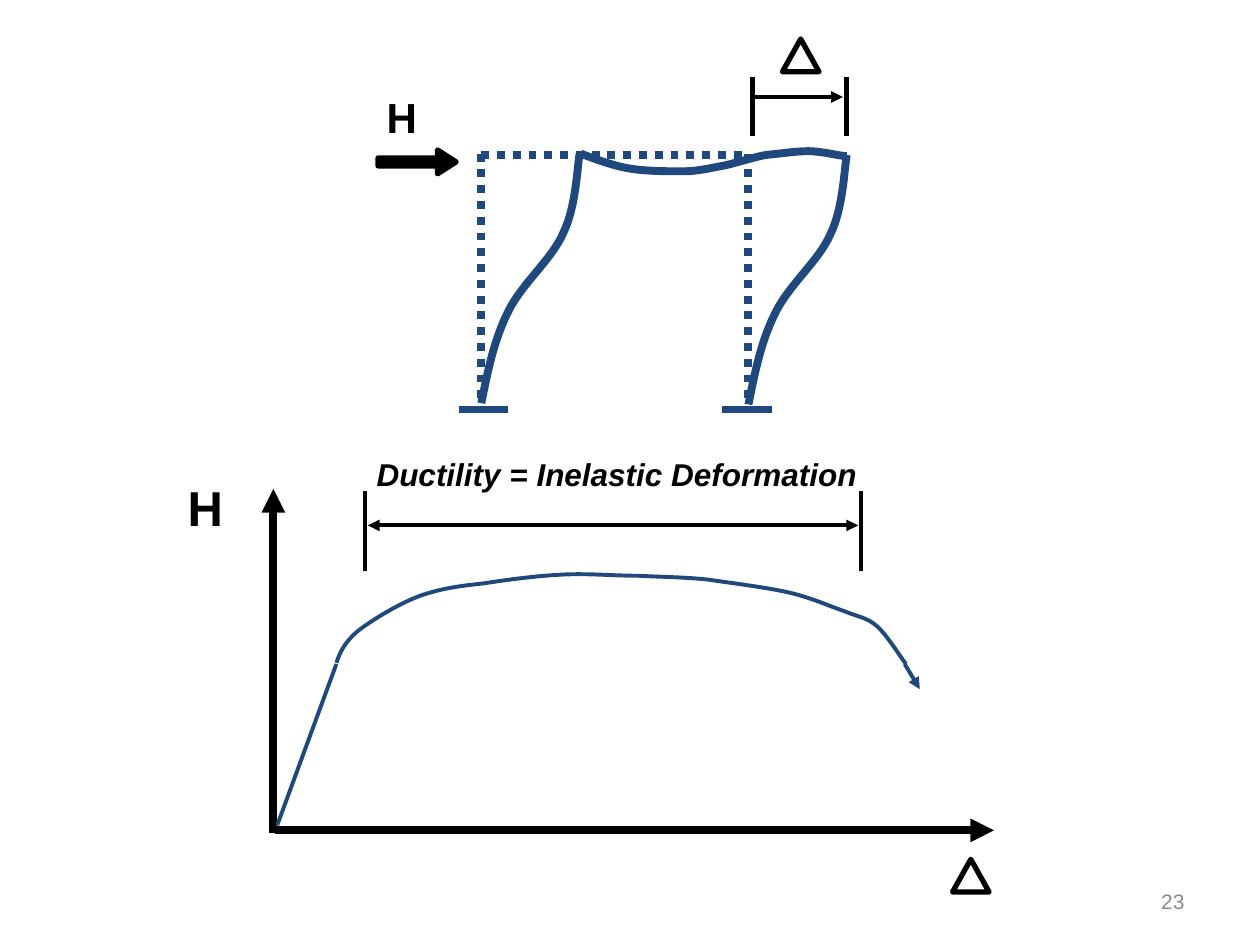
from lxml import etree
from pptx import Presentation
from pptx.dml.color import RGBColor
from pptx.enum.dml import MSO_LINE
from pptx.enum.shapes import MSO_CONNECTOR, MSO_SHAPE
from pptx.enum.text import MSO_ANCHOR, PP_ALIGN
from pptx.oxml.ns import qn
from pptx.util import Inches, Pt

STRAIGHT = MSO_CONNECTOR.STRAIGHT
DOTTED = MSO_LINE.ROUND_DOT
TRIANGLE, RIGHT_ARROW = MSO_SHAPE.ISOSCELES_TRIANGLE, MSO_SHAPE.RIGHT_ARROW
LEFT, RIGHT = PP_ALIGN.LEFT, PP_ALIGN.RIGHT
TOP, MIDDLE = MSO_ANCHOR.TOP, MSO_ANCHOR.MIDDLE
BLUE, BLACK, GRAY = "1F497D", "000000", "8C8C8C"

FRAME_DOTTED = [
    (3.82, 1.22, 3.82, 3.25),
    (5.94, 1.22, 5.94, 3.25),
    (3.82, 1.23, 5.93, 1.23),
]
FRAME_BASES = [(3.64, 3.25, 4.03, 3.25), (5.73, 3.25, 6.13, 3.25)]
DRIFT_TICKS = [(5.97, 0.61, 5.97, 1.08), (6.72, 0.61, 6.72, 1.08)]
DRIFT_ARROW = (5.97, 0.77, 6.69, 0.77)
AXES = [(2.18, 6.59, 7.89, 6.59), (2.17, 6.61, 2.17, 3.88)]
ELASTIC = (2.2, 6.55, 2.67, 5.27)
FAILURE = (7.18, 5.27, 7.3, 5.47)
DUCTILITY_TICKS = [(2.9, 4.53, 2.9, 3.9), (6.83, 4.53, 6.83, 3.9)]
DUCTILITY_ARROW = (2.92, 4.17, 6.81, 4.17)

COLUMN = [
    (3.82, 3.2), (3.87, 2.95), (3.92, 2.7), (4.03, 2.48), (4.14, 2.25),
    (4.38, 2.06), (4.47, 1.85), (4.57, 1.65), (4.58, 1.34), (4.6, 1.22),
]
COLUMN_SHIFT = (2.12, 0.01)
BEAM = [
    (4.61, 1.22), (4.74, 1.27), (4.88, 1.32), (5.01, 1.34), (5.14, 1.36),
    (5.3, 1.36), (5.42, 1.36), (5.53, 1.36), (5.61, 1.34), (5.72, 1.32),
    (5.83, 1.3), (5.97, 1.25), (6.08, 1.23), (6.2, 1.22), (6.31, 1.2),
    (6.42, 1.2), (6.52, 1.2), (6.67, 1.24), (6.72, 1.24),
]
RESPONSE = [
    (2.67, 5.26), (2.7, 5.17), (2.74, 5.09), (2.85, 5), (2.97, 4.91),
    (3.17, 4.79), (3.33, 4.73), (3.5, 4.67), (3.65, 4.65), (3.84, 4.63),
    (4.03, 4.6), (4.26, 4.57), (4.47, 4.56), (4.67, 4.55), (4.88, 4.57),
    (5.07, 4.57), (5.27, 4.58), (5.43, 4.58), (5.62, 4.6), (5.82, 4.63),
    (6.07, 4.66), (6.25, 4.7), (6.43, 4.74), (6.58, 4.81), (6.7, 4.85),
    (6.82, 4.9), (6.88, 4.9), (6.96, 4.97), (7.04, 5.04), (7.15, 5.22),
    (7.19, 5.27),
]
SHAPES = [
    (TRIANGLE, (6.21, 0.31, 0.29, 0.26), None, []),
    (TRIANGLE, (7.56, 6.82, 0.29, 0.26), None, []),
    (RIGHT_ARROW, (3, 1.19, 0.62, 0.19), BLACK, [0.333, 0.778]),
]
LABELS = [
    ("H", (2.97, 0.68, 0.66, 0.51), 24, BLACK, True, False, LEFT, TOP),
    ("H", (1.39, 3.74, 0.66, 0.57), 28, BLACK, True, False, LEFT, TOP),
    ("Ductility = Inelastic Deformation", (2.89, 3.56, 5.22, 0.4),
     18, BLACK, True, True, LEFT, TOP),
    ("23", (7.17, 6.95, 2.33, 0.4), 12, GRAY, False, False, RIGHT, MIDDLE),
]


def rgb(value):
    return RGBColor.from_string(value)


def set_line(shape, color, width):
    shape.line.color.rgb = rgb(color)
    shape.line.width = Pt(width)


def add_line(s, ends, color, width, dash=None, arrows=()):
    line = s.shapes.add_connector(STRAIGHT, *map(Inches, ends))
    set_line(line, color, width)
    if dash:
        line.line.dash_style = dash
    ln = line.line._get_or_add_ln()
    for end in arrows:
        etree.SubElement(ln, qn(f"a:{end}"), type="triangle")
    etree.SubElement(line._element.spPr, qn("a:effectLst"))


def add_curve(s, points, color, width):
    points = [(Inches(x), Inches(y)) for x, y in points]
    builder = s.shapes.build_freeform(*points[0])
    builder.add_line_segments(points[1:], close=False)
    curve = builder.convert_to_shape()
    outline = next(curve._element.iter(qn("a:path")))
    segments = outline.findall(qn("a:lnTo"))
    for i in range(0, len(segments), 3):
        bezier = etree.SubElement(outline, qn("a:cubicBezTo"))
        for segment in segments[i:i + 3]:
            bezier.append(segment[0])
            outline.remove(segment)
    curve.fill.background()
    curve.shadow.inherit = False
    set_line(curve, color, width)


def add_shape(s, kind, box, fill, adjustments):
    sp = s.shapes.add_shape(kind, *map(Inches, box))
    sp.shadow.inherit = False
    for i, value in enumerate(adjustments):
        sp.adjustments[i] = value
    if fill:
        sp.fill.solid()
        sp.fill.fore_color.rgb = rgb(fill)
    else:
        sp.fill.background()
    set_line(sp, BLACK, 3)


def add_label(s, text, box, size, color, bold, italic, align, anchor):
    tf = s.shapes.add_textbox(*map(Inches, box)).text_frame
    tf.word_wrap = True
    tf.vertical_anchor = anchor
    p = tf.paragraphs[0]
    p.alignment = align
    r = p.add_run()
    r.text = text
    r.font.name = "Arial"
    r.font.size = Pt(size)
    r.font.bold = bold
    r.font.italic = italic
    r.font.color.rgb = rgb(color)


def main():
    prs = Presentation()
    prs.slide_width, prs.slide_height = Inches(10), Inches(7.5)
    s = prs.slides.add_slide(prs.slide_layouts[6])

    for ends in FRAME_DOTTED:
        add_line(s, ends, BLUE, 4.5, DOTTED)
    for ends in FRAME_BASES:
        add_line(s, ends, BLUE, 4.5)
    dx, dy = COLUMN_SHIFT
    for points in (COLUMN, [(x + dx, y + dy) for x, y in COLUMN], BEAM):
        add_curve(s, points, BLUE, 4.5)
    for ends in DRIFT_TICKS:
        add_line(s, ends, BLACK, 3)
    add_line(s, DRIFT_ARROW, BLACK, 2.25, arrows=["tailEnd"])

    for ends in AXES:
        add_line(s, ends, BLACK, 4.5, arrows=["tailEnd"])
    add_line(s, ELASTIC, BLUE, 2.25)
    add_curve(s, RESPONSE, BLUE, 2.25)
    add_line(s, FAILURE, BLUE, 2.25, arrows=["tailEnd"])
    for ends in DUCTILITY_TICKS:
        add_line(s, ends, BLACK, 2.25)
    add_line(s, DUCTILITY_ARROW, BLACK, 2.25, arrows=["headEnd", "tailEnd"])

    for shape in SHAPES:
        add_shape(s, *shape)
    for label in LABELS:
        add_label(s, *label)
    prs.save("out.pptx")


if __name__ == "__main__":
    main()
